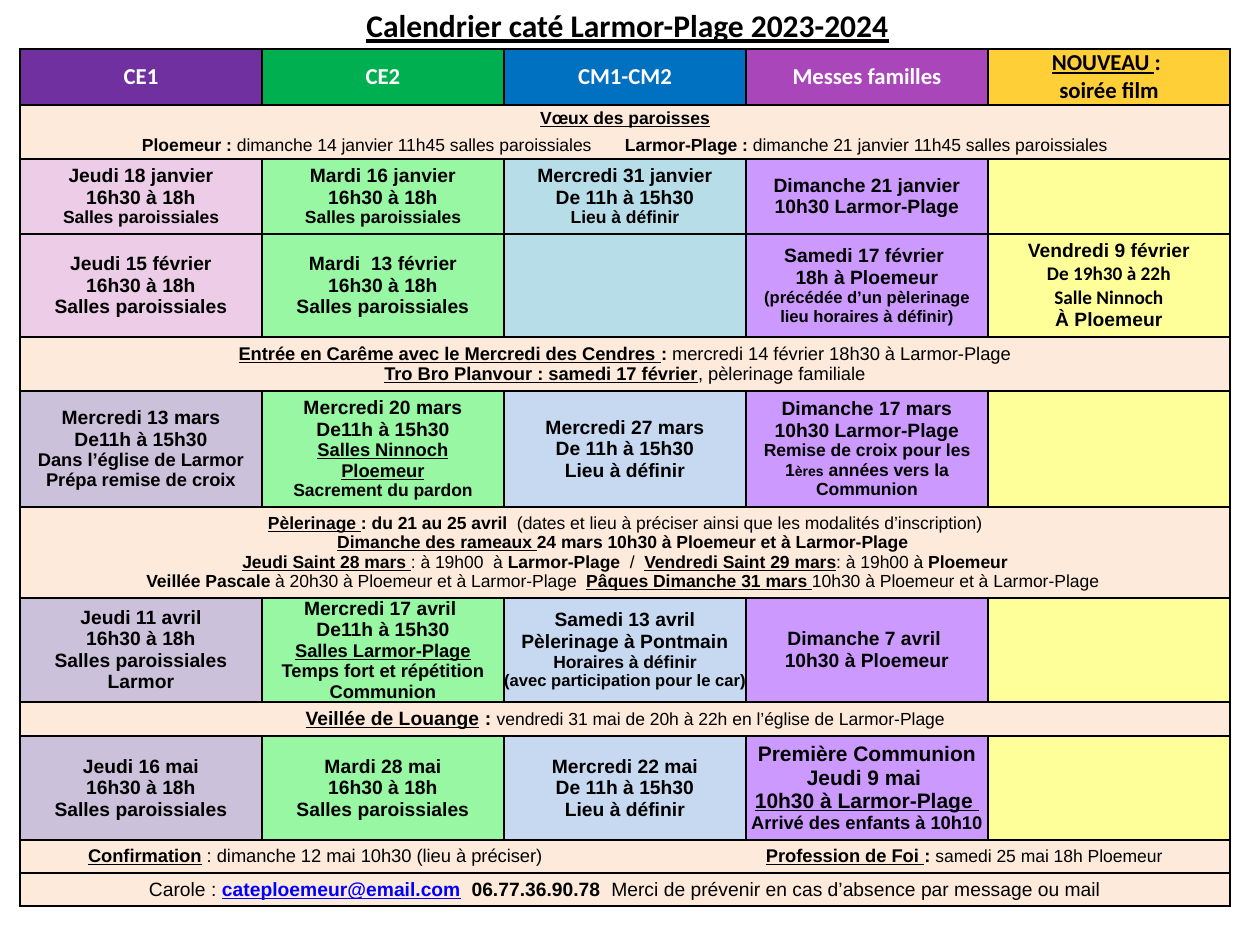
from lxml.etree import SubElement
from pptx import Presentation
from pptx.dml.color import RGBColor as RGB
from pptx.enum.text import MSO_ANCHOR, PP_ALIGN
from pptx.oxml.ns import qn
from pptx.util import Pt

PX = 914400 / 126
BLACK, WHITE = RGB(0, 0, 0), RGB(255, 255, 255)
LINK = RGB(0x00, 0x00, 0xFF)
BAND = RGB(0xFD, 0xEA, 0xDA)
GREEN, VIOLET, YELLOW = RGB(0x97, 0xF7, 0xA2), RGB(0xCC, 0x99, 0xFF), RGB(0xFF, 0xFF, 0x99)
HEAD = [RGB(0x70, 0x30, 0xA0), RGB(0x00, 0xB0, 0x50), RGB(0x00, 0x70, 0xC0),
        RGB(0xA9, 0x46, 0xBA), RGB(0xFF, 0xCF, 0x37)]
WINTER = [RGB(0xEC, 0xCC, 0xE7), GREEN, RGB(0xB7, 0xDE, 0xE8), VIOLET, YELLOW]
SPRING = [RGB(0xCC, 0xC1, 0xDA), GREEN, RGB(0xC6, 0xD9, 0xF1), VIOLET, YELLOW]

# Run styles; a plain string is a bold run
BOLD, UNDER, PLAIN = ({"bold": b, "underline": u} for b, u in
                      ((True, False), (True, True), (False, False)))
SMALL = {**PLAIN, "size": Pt(10)}
TITLE = [(18, [("Calendrier caté Larmor-Plage 2023-2024", UNDER)], "Calibri")]
TITLE_BOX = (354, 0, 581, 50)
TABLE_AT, COL_W = (20, 49), 242


def lines(*texts, size=11):
    return [(size, [t]) for t in texts]


def head(text, color=WHITE):
    return [(13, [(text, {**BOLD, "color": color})], "Calibri")]


# Each row: height, cell margin on or off, fills, cells, optional tab stops.
# Each cell is a list of paragraphs: size, runs, optional font.
# A row of one cell spans the whole table.
ROWS = [
    (56, False, HEAD, [
        head("CE1"), head("CE2"), head("CM1-CM2"), head("Messes familles"),
        [(13, [("NOUVEAU ", UNDER), ": "], "Calibri"), (13, ["soirée film"], "Calibri")]]),
    (54, False, [BAND], [[
        (10, [("Vœux des paroisses", UNDER)]),
        (10, ["\tPloemeur : ", ("dimanche 14 janvier 11h45 salles paroissiales", PLAIN),
              "\tLarmor-Plage : ", ("dimanche 21 janvier 11h45 salles paroissiales", PLAIN)])]],
     (122, 605)),
    (75, True, WINTER, [
        lines("Jeudi 18 janvier", "16h30 à 18h") + lines("Salles paroissiales", size=10),
        lines("Mardi 16 janvier", "16h30 à 18h") + lines("Salles paroissiales", size=10),
        lines("Mercredi 31 janvier", "De 11h à 15h30") + lines("Lieu à définir", size=10),
        lines("Dimanche 21 janvier", "10h30 Larmor-Plage"), []]),
    (103, True, WINTER, [
        lines("Jeudi 15 février", "16h30 à 18h", "Salles paroissiales"),
        lines("Mardi  13 février", "16h30 à 18h", "Salles paroissiales"), [],
        lines("Samedi 17 février ", "18h à Ploemeur")
        + lines("(précédée d’un pèlerinage lieu horaires à définir)", size=9.5),
        [(11, ["Vendredi 9 février"]), (11, ["De 19h30 à 22h"], "Calibri"),
         (11, ["Salle Ninnoch"], "Calibri"), (11, ["À Ploemeur"])]]),
    (54, True, [BAND], [[
        (10.5, [("Entrée en Carême avec le Mercredi des Cendres ", UNDER), ": ",
                ("mercredi 14 février 18h30 à Larmor-Plage", PLAIN)]),
        (10.5, [("Tro Bro Planvour : samedi 17 février", UNDER),
                (", pèlerinage familiale", PLAIN)])]]),
    (116, True, SPRING, [
        lines("Mercredi 13 mars", "De11h à 15h30")
        + lines("Dans l’église de Larmor", "Prépa remise de croix", size=10.5),
        lines("Mercredi 20 mars", "De11h à 15h30")
        + [(10.5, [("Salles Ninnoch Ploemeur", UNDER)])]
        + lines("Sacrement du pardon", size=10),
        lines("Mercredi 27 mars", "De 11h à 15h30", "Lieu à définir"),
        lines("Dimanche 17 mars", "10h30 Larmor-Plage")
        + [(10, ["Remise de croix pour les 1", ("ères", {**BOLD, "size": Pt(8)}),
                 " années vers la Communion"])], []]),
    (91, True, [BAND], [[
        (10, [("Pèlerinage ", UNDER), ": du 21 au 25 avril  ",
              ("(dates et lieu à préciser ainsi que les modalités d’inscription)", PLAIN)]),
        (10, [("Dimanche des rameaux ", UNDER), "24 mars 10h30 à Ploemeur et à Larmor-Plage "]),
        (10, [("Jeudi Saint 28 mars ", UNDER), (": à 19h00  à ", PLAIN), "Larmor-Plage",
              ("  /  ", PLAIN), ("Vendredi Saint 29 mars", UNDER), (": à 19h00 à", PLAIN),
              " Ploemeur"]),
        (10, ["Veillée Pascale ", ("à 20h30 à Ploemeur et à Larmor-Plage  ", PLAIN),
              ("Pâques Dimanche 31 mars ", UNDER),
              ("10h30 à Ploemeur et à Larmor-Plage ", PLAIN)])]]),
    (104, False, SPRING, [
        lines("Jeudi 11 avril", "16h30 à 18h", "Salles paroissiales Larmor"),
        lines("Mercredi 17 avril ", "De11h à 15h30")
        + [(10.5, [("Salles Larmor-Plage", UNDER)])]
        + lines("Temps fort et répétition Communion", size=10.5),
        lines("Samedi 13 avril", "Pèlerinage à Pontmain") + lines("Horaires à définir", size=10)
        + lines("(avec participation pour le car)", size=9.5),
        lines("Dimanche 7 avril ", "10h30 à Ploemeur"), []]),
    (34, False, [BAND], [[
        (11, [("Veillée de Louange", UNDER), " : ",
              ("vendredi 31 mai de 20h à 22h en l’église de Larmor-Plage", SMALL)])]]),
    (104, False, SPRING, [
        lines("Jeudi 16 mai", "16h30 à 18h", "Salles paroissiales"),
        lines("Mardi 28 mai", "16h30 à 18h", "Salles paroissiales"),
        lines("Mercredi 22 mai", "De 11h à 15h30", "Lieu à définir"),
        lines("Première Communion", "Jeudi 9 mai ", size=12)
        + [(12, [("10h30 à Larmor-Plage ", UNDER)])]
        + lines("Arrivé des enfants à 10h10", size=10.5), []]),
    (33, False, [BAND], [[
        (10.5, ["\t", ("Confirmation", UNDER), " ",
                (": dimanche 12 mai 10h30 (lieu à préciser)\t", PLAIN),
                ("Profession de Foi ", UNDER), ": ", ("samedi 25 mai 18h Ploemeur", SMALL)])]],
     (68, 746)),
    (33, False, [BAND], [[
        (11, [("Carole : ", PLAIN), ("cateploemeur@email.com", {**UNDER, "color": LINK}),
              "  06.77.36.90.78  ",
              ("Merci de prévenir en cas d’absence par message ou mail", PLAIN)])]]),
]


def px(n):
    return round(n * PX)


def write(tf, paragraphs, align=PP_ALIGN.CENTER, tabs=()):
    for i, (size, runs, *font) in enumerate(paragraphs):
        p = tf.paragraphs[0] if i == 0 else tf.add_paragraph()
        p.alignment = align
        if i:
            p.space_before = Pt(4.5 if tabs else 0)
        if tabs and any("\t" in (r if isinstance(r, str) else r[0]) for r in runs):
            p.alignment = PP_ALIGN.LEFT
            stops = SubElement(p._p.get_or_add_pPr(), qn("a:tabLst"))
            for pos in tabs:
                SubElement(stops, qn("a:tab"), pos=str(px(pos)), algn="l")
        for run in runs:
            text, style = (run, BOLD) if isinstance(run, str) else run
            r = p.add_run()
            r.text = text
            look = {"name": font[0] if font else "Arial", "size": Pt(size),
                    "color": BLACK, **style}
            r.font.color.rgb = look.pop("color")
            for key, value in look.items():
                setattr(r.font, key, value)


def add_borders(cell):
    tcPr = cell._tc.get_or_add_tcPr()
    for side in ("lnL", "lnR", "lnT", "lnB"):
        ln = SubElement(tcPr, qn(f"a:{side}"), w=str(Pt(1.5)))
        SubElement(SubElement(ln, qn("a:solidFill")), qn("a:srgbClr"), val=str(BLACK))


def fill_row(table, index, height, padded, fills, cells, tabs=()):
    table.rows[index].height = px(height)
    row = [table.cell(index, c) for c in range(5)]
    if len(cells) == 1:
        row[0].merge(row[-1])
    for cell in row:
        add_borders(cell)
    for cell, color, paragraphs in zip(row, fills, cells):
        cell.fill.solid()
        cell.fill.fore_color.rgb = color
        cell.vertical_anchor = MSO_ANCHOR.MIDDLE
        if not padded:
            for side in ("left", "right", "top", "bottom"):
                setattr(cell, f"margin_{side}", 0)
        write(cell.text_frame, paragraphs, tabs=tabs)


prs = Presentation()
prs.slide_width, prs.slide_height = px(1260), px(945)
s = prs.slides.add_slide(prs.slide_layouts[6])

total = sum(row[0] for row in ROWS)
table = s.shapes.add_table(len(ROWS), 5, *map(px, (*TABLE_AT, 5 * COL_W, total))).table
table.first_row = table.horz_banding = False
for col in table.columns:
    col.width = px(COL_W)
for i, row in enumerate(ROWS):
    fill_row(table, i, *row)

tf = s.shapes.add_textbox(*map(px, TITLE_BOX)).text_frame
tf.word_wrap = True
write(tf, TITLE, PP_ALIGN.LEFT)

prs.save("out.pptx")
